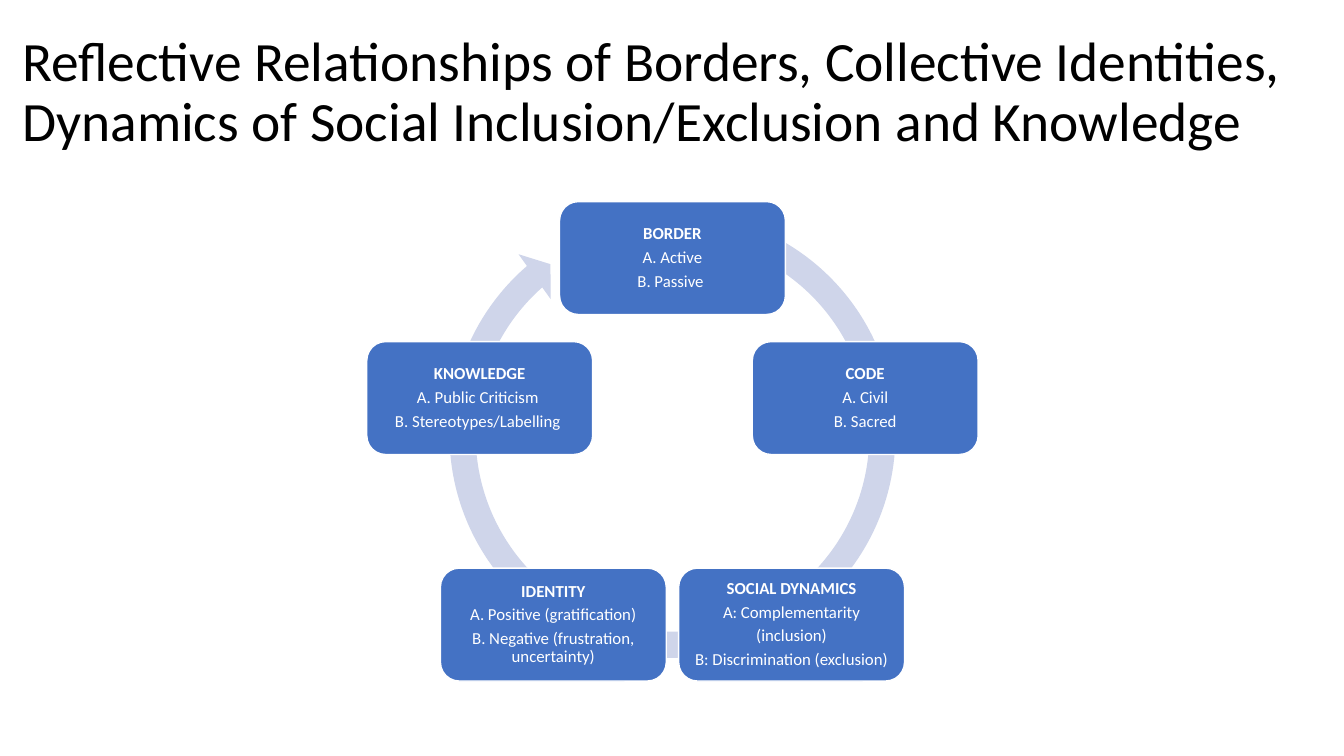
"""Build a slide showing a five-step cycle of borders, identities and knowledge."""
import math
from dataclasses import dataclass

from pptx import Presentation
from pptx import util as u
from pptx.dml.color import RGBColor
from pptx.enum import shapes, text

BLACK = RGBColor(0x00, 0x00, 0x00)
WHITE = RGBColor(0xFF, 0xFF, 0xFF)
BLUE = RGBColor(0x44, 0x72, 0xC4)
PALE_BLUE = RGBColor(0xCF, 0xD5, 0xEA)
FONT = "Calibri"

CENTER_X, CENTER_Y, RADIUS = 6.67, 4.57, 2.01
BOX_W, BOX_H, INSET = 2.24, 1.12, 0.05
RING_TOP, RING_SIZE = 1.96, 4.71
RING_ADJUSTMENTS = (0.055, 3.307, 137.364, 174.101, 0.058)


@dataclass(frozen=True)
class Step:
    heading: str
    items: tuple[str, ...]


STEPS = (
    Step("BORDER", ("A. Active", "B. Passive ")),
    Step("CODE", ("A. Civil", "B. Sacred")),
    Step("SOCIAL DYNAMICS", ("A: Complementarity", "(inclusion)", "B: Discrimination (exclusion)")),
    Step("IDENTITY", ("A. Positive (gratification)", "B. Negative (frustration, uncertainty)")),
    Step("KNOWLEDGE", ("A. Public Criticism ", "B. Stereotypes/Labelling ")),
)


def add_run(p, content: str, size: float, color: RGBColor, bold: bool = False) -> None:
    p.line_spacing = 0.9
    r = p.add_run()
    r.text = content
    r.font.name = FONT
    r.font.size = u.Pt(size)
    r.font.bold = bold
    r.font.color.rgb = color


def set_title(s, content: str) -> None:
    sp = s.shapes.title
    sp.left, sp.top, sp.width, sp.height = map(u.Inches, (0.12, 0, 13.11, 1.85))
    tf = sp.text_frame
    tf.word_wrap = True
    tf.auto_size = text.MSO_AUTO_SIZE.NONE
    tf.vertical_anchor = text.MSO_ANCHOR.MIDDLE
    p = tf.paragraphs[0]
    p.alignment = text.PP_ALIGN.LEFT
    add_run(p, content, 39.6, BLACK)


def add_ring(s) -> None:
    sp = s.shapes.add_shape(
        shapes.MSO_SHAPE.CIRCULAR_ARROW,
        u.Inches(CENTER_X - RING_SIZE / 2), u.Inches(RING_TOP),
        u.Inches(RING_SIZE), u.Inches(RING_SIZE),
    )
    for i, value in enumerate(RING_ADJUSTMENTS):
        sp.adjustments[i] = value
    sp.shadow.inherit = False
    sp.fill.solid()
    sp.fill.fore_color.rgb = PALE_BLUE
    sp.line.fill.background()


def add_step(s, step: Step, angle: float) -> None:
    x = CENTER_X + RADIUS * math.sin(angle)
    y = CENTER_Y - RADIUS * math.cos(angle)
    sp = s.shapes.add_shape(
        shapes.MSO_SHAPE.ROUNDED_RECTANGLE,
        u.Inches(x - BOX_W / 2), u.Inches(y - BOX_H / 2),
        u.Inches(BOX_W), u.Inches(BOX_H),
    )
    sp.shadow.inherit = False
    sp.fill.solid()
    sp.fill.fore_color.rgb = BLUE
    sp.line.color.rgb = WHITE
    sp.line.width = u.Pt(1)
    tf = sp.text_frame
    tf.word_wrap = True
    tf.vertical_anchor = text.MSO_ANCHOR.MIDDLE
    tf.margin_left = tf.margin_right = u.Inches(INSET)
    tf.margin_top = tf.margin_bottom = u.Inches(INSET)
    for i, line in enumerate((step.heading, *step.items)):
        p = tf.add_paragraph() if i else tf.paragraphs[0]
        p.alignment = text.PP_ALIGN.CENTER
        p.space_after = u.Pt(4)
        add_run(p, line, 12, WHITE, bold=i == 0)


def main() -> None:
    prs = Presentation()
    prs.slide_width, prs.slide_height = u.Inches(13.33), u.Inches(7.5)
    s = prs.slides.add_slide(prs.slide_layouts[5])
    set_title(
        s,
        "Reflective Relationships of Borders, Collective Identities, "
        "Dynamics of Social Inclusion/Exclusion and Knowledge",
    )
    add_ring(s)
    for i, step in enumerate(STEPS):
        add_step(s, step, math.tau * i / len(STEPS))
    prs.save("out.pptx")


if __name__ == "__main__":
    main()
